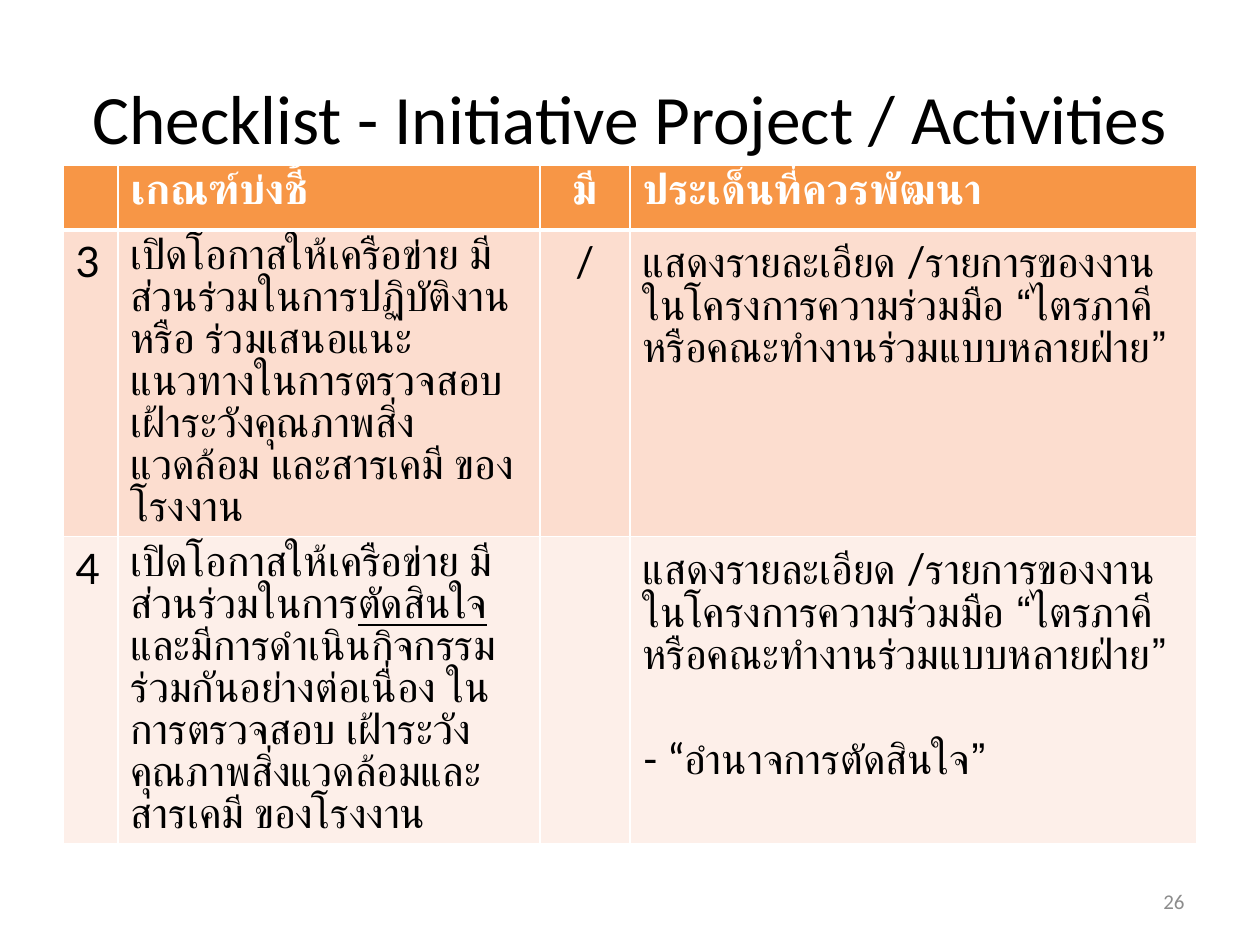
from pptx import Presentation
from pptx.dml.color import RGBColor
from pptx.enum.text import MSO_ANCHOR, PP_ALIGN
from pptx.oxml import parse_xml
from pptx.oxml.ns import nsdecls
from pptx.util import Pt

LEFT, MID, RIGHT = PP_ALIGN.LEFT, PP_ALIGN.CENTER, PP_ALIGN.RIGHT
CENTRE = MSO_ANCHOR.MIDDLE
PX = 914400 // 126

THEME = {
    "head": "F79646", "bands": ("FCDDCF", "FDEFE9"), "rule": "FFFFFF",
    "light": "FFFFFF", "dark": "000000", "muted": "8C8C8C",
    "plain": "Calibri", "body": "Lato",
    "title_pt": 39.6, "body_pt": 24, "num_pt": 12, "gap_pt": 32,
}

# Content: a cell is a list of paragraphs, a paragraph a list of runs,
# and a run in a tuple is underlined
TITLE = "Checklist - Initiative Project / Activities"
NUMBER = "26"
DETAIL = ["แสดงรายละเอียด /รายการของงานในโครงการความร่วมมือ "
          "“ไตรภาคีหรือคณะทำงานร่วมแบบหลายฝ่าย”"]
ROWS = [
    [[], [["เกณฑ์บ่งชี้"]], [["มี"]], [["ประเด็นที่ควรพัฒนา"]]],
    [[["3"]],
     [["เปิดโอกาสให้เครือข่าย มีส่วนร่วมในการปฏิบัติงาน หรือ ร่วมเสนอแนะ "
       "แนวทางในการตรวจสอบ เฝ้าระวังคุณภาพสิ่งแวดล้อม และสารเคมี ของโรงงาน"]],
     [["/"]],
     [DETAIL]],
    [[["4"]],
     [["เปิดโอกาสให้เครือข่าย มีส่วนร่วมในการ", ("ตัดสินใจ",),
       " และมีการดำเนินกิจกรรมร่วมกันอย่างต่อเนื่อง ในการตรวจสอบ "
       "เฝ้าระวังคุณภาพสิ่งแวดล้อมและสารเคมี ของโรงงาน"]],
     [],
     [DETAIL, ["- “อำนาจการตัดสินใจ”"]]],
]

# Layout in px
SLIDE = (1260, 945)
TITLE_BOX = (63, 38, 1134, 157)
NUM_BOX = (903, 876, 294, 50)
ORIGIN = (63, 165)
COLS = (55, 422, 90, 567)
HEIGHTS = (65, 306, 306)
ALIGNS = (LEFT, LEFT, MID, LEFT)


def emu(*vals):
    return [val * PX for val in vals]


def style(para, face, size, color, align, bold=False):
    para.alignment = align
    font = para.font
    font.name, font.size, font.bold = face, Pt(size), bold
    font.color.rgb = RGBColor.from_string(color)


def edge(cell, side, width):
    return parse_xml(
        f'<a:ln{side} {nsdecls("a")} w="{Pt(width)}"><a:solidFill>'
        f'<a:srgbClr val="{THEME["rule"]}"/></a:solidFill></a:ln{side}>')


def rule(cell, top, bottom):
    props = cell._tc.get_or_add_tcPr()
    widths = (("L", 1), ("R", 1), ("T", top), ("B", bottom))
    for pos, (side, width) in enumerate(widths):
        props.insert(pos, edge(cell, side, width))


def write(cell, paras, color, align, bold):
    frame = cell.text_frame
    for num, runs in enumerate(paras or [[]]):
        para = frame.add_paragraph() if num else frame.paragraphs[0]
        style(para, THEME["body"], THEME["body_pt"], color, align, bold)
        if num:
            para.space_before = Pt(THEME["gap_pt"])
        for item in runs:
            run = para.add_run()
            under = isinstance(item, tuple)
            run.text = item[0] if under else item
            if under:
                run.font.underline = True


def add_grid(slide):
    size = (sum(COLS), sum(HEIGHTS))
    grid = slide.shapes.add_table(
        len(ROWS), len(COLS), *emu(*ORIGIN, *size)).table
    for col, width in zip(grid.columns, emu(*COLS)):
        col.width = width
    for row, height in zip(grid.rows, emu(*HEIGHTS)):
        row.height = height
    fills = (THEME["head"], *THEME["bands"])
    for r, line in enumerate(ROWS):
        head = r == 0
        for c, paras in enumerate(line):
            cell = grid.cell(r, c)
            cell.fill.solid()
            cell.fill.fore_color.rgb = RGBColor.from_string(fills[r])
            rule(cell, 3 if r == 1 else 1, 3 if head else 1)
            color = THEME["light"] if head else THEME["dark"]
            write(cell, paras, color, ALIGNS[c], head)


def main():
    prs = Presentation()
    prs.slide_width, prs.slide_height = emu(*SLIDE)
    slide = prs.slides.add_slide(prs.slide_layouts[5])

    # Title
    title = slide.shapes.title
    title.left, title.top, title.width, title.height = emu(*TITLE_BOX)
    title.text_frame.text = TITLE
    title.text_frame.vertical_anchor = CENTRE
    style(title.text_frame.paragraphs[0], THEME["plain"],
          THEME["title_pt"], THEME["dark"], MID)

    # Checklist
    add_grid(slide)

    # Slide number
    frame = slide.shapes.add_textbox(*emu(*NUM_BOX)).text_frame
    frame.word_wrap = True
    frame.vertical_anchor = CENTRE
    frame.text = NUMBER
    style(frame.paragraphs[0], THEME["plain"], THEME["num_pt"],
          THEME["muted"], RIGHT)
    prs.save("out.pptx")


if __name__ == "__main__":
    main()
